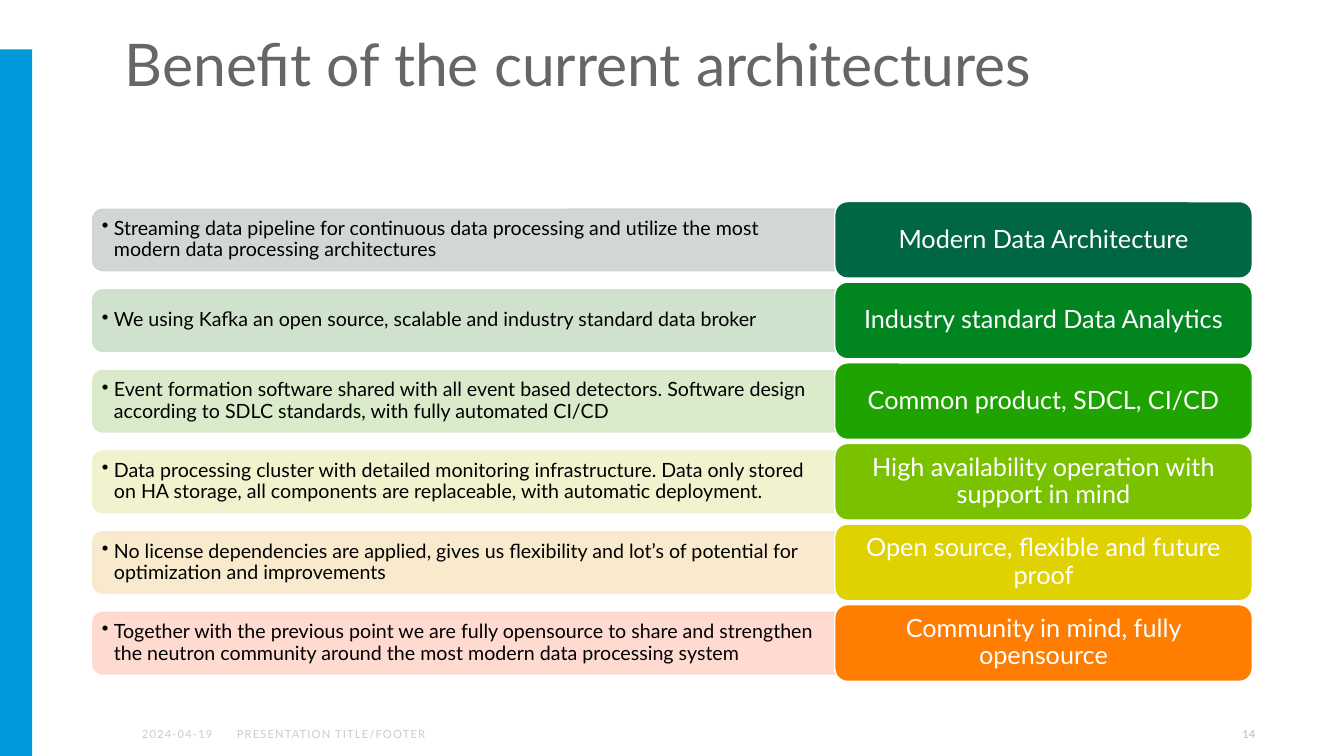
"""Build the slide on the benefits of the current architectures."""
from lxml import etree
from pptx import Presentation
from pptx.dml.color import RGBColor
from pptx.enum.shapes import MSO_SHAPE
from pptx.enum.text import MSO_ANCHOR, PP_ALIGN
from pptx.oxml.ns import qn
from pptx.util import Inches, Pt

RECTANGLE = MSO_SHAPE.RECTANGLE
ROUNDED = MSO_SHAPE.ROUNDED_RECTANGLE
ROUNDED_TOP = MSO_SHAPE.ROUND_2_SAME_RECTANGLE
TOP, MIDDLE = MSO_ANCHOR.TOP, MSO_ANCHOR.MIDDLE
LEFT, CENTER, RIGHT = PP_ALIGN.LEFT, PP_ALIGN.CENTER, PP_ALIGN.RIGHT

TITLE = "Benefit of the current architectures"
BENEFITS = [
    ("Modern Data Architecture",
     "Streaming data pipeline for continuous data processing and utilize the most "
     "modern data processing architectures", "006646", "CCD3CF"),
    ("Industry standard Data Analytics",
     "We using Kafka an open source, scalable and industry standard data broker",
     "008521", "CADFC9"),
    ("Common product, SDCL, CI/CD",
     "Event formation software shared with all event based detectors. Software design "
     "according to SDLC standards, with fully automated CI/CD", "1FA300", "D7E9C7"),
    ("High availability operation with support in mind",
     "Data processing cluster with detailed monitoring infrastructure. Data only stored "
     "on HA storage, all components are replaceable, with automatic deployment.",
     "7AC200", "EFF2C8"),
    ("Open source, flexible and future proof",
     "No license dependencies are applied, gives us flexibility and lot’s of potential for "
     "optimization and improvements", "E0D100", "F9E8C9"),
    ("Community in mind, fully opensource",
     "Together with the previous point we are fully opensource to share and strengthen "
     "the neutron community around the most modern data processing system",
     "FF7D00", "FFD6CC"),
]
FOOTERS = [
    ("PRESENTATION TITLE/FOOTER", (2.25, 7.08, 4.72, 0.4), LEFT, False, 80),
    ("14", (9.55, 7.08, 3, 0.4), RIGHT, True, 0),
    ("2024-04-19", (1.31, 7.08, 0.91, 0.4), LEFT, False, 80),
]
THEME = {
    "font": "Lato", "accent": "0099DC", "title": "666666", "footer": "CCCCCC",
    "body": "000000", "light": "FFFFFF",
    "title_size": 42, "label_size": 18, "body_size": 14, "footer_size": 8,
}
FIRST_TOP, PITCH = 2.0, 0.8
LABEL_LEFT, LABEL_WIDTH, LABEL_HEIGHT = 8.28, 4.14, 0.76
BAR_LEFT, BAR_LENGTH, BAR_HEIGHT = 0.92, 7.36, 0.61
BODY_LEFT, BODY_WIDTH, BODY_HEIGHT = 0.95, 7.33, 0.55


def add_block(slide, kind, box, fill, line=None, alpha=None):
    """Add a filled preset shape, with an optional line and opacity."""
    shape = slide.shapes.add_shape(kind, *map(Inches, box))
    shape.shadow.inherit = False
    shape.fill.solid()
    shape.fill.fore_color.rgb = RGBColor.from_string(fill)
    if line:
        shape.line.color.rgb = RGBColor.from_string(line)
        shape.line.width = Pt(1)
    else:
        shape.line.fill.background()
    if alpha:
        for color in shape._element.spPr.iter(qn("a:srgbClr")):
            etree.SubElement(color, qn("a:alpha"), val=str(alpha * 1000))
    return shape


def write(shape, text, size, color, align=LEFT, anchor=MIDDLE,
          insets=(0.1, 0.05, 0.1, 0.05), line_spacing=None, bold=False,
          tracking=0, bullet=False):
    """Write one formatted paragraph into a shape."""
    frame = shape.text_frame
    sides = ("margin_left", "margin_top", "margin_right", "margin_bottom")
    frame_format = dict(zip(sides, map(Inches, insets)))
    frame_format.update(word_wrap=True, vertical_anchor=anchor)
    for name, value in frame_format.items():
        setattr(frame, name, value)
    paragraph = frame.paragraphs[0]
    if bullet:
        properties = paragraph._p.get_or_add_pPr()
        properties.set("marL", str(Inches(0.12)))
        properties.set("indent", str(-Inches(0.12)))
        etree.SubElement(properties, qn("a:buChar"), char="•")
    paragraph.alignment = align
    paragraph.line_spacing = line_spacing
    run = paragraph.add_run()
    run.text = text
    font_format = {"name": THEME["font"], "size": Pt(size), "bold": bold}
    for name, value in font_format.items():
        setattr(run.font, name, value)
    run.font.color.rgb = RGBColor.from_string(color)
    if tracking:
        run._r.get_or_add_rPr().set("spc", str(tracking))


def add_text(slide, box, text, size, color, **options):
    """Add a text box holding one paragraph."""
    write(slide.shapes.add_textbox(*map(Inches, box)), text, size, color, **options)


def add_benefit(slide, row, label, body, strong, pale):
    """Add one row: a pale bar with its bullet and a strong label."""
    top = FIRST_TOP + row * PITCH
    middle = top + LABEL_HEIGHT / 2
    bar_box = (BAR_LEFT + (BAR_LENGTH - BAR_HEIGHT) / 2, middle - BAR_LENGTH / 2,
               BAR_HEIGHT, BAR_LENGTH)
    bar = add_block(slide, ROUNDED_TOP, bar_box, pale, pale, alpha=90)
    bar.rotation = 270
    add_text(slide, (BODY_LEFT, middle - BODY_HEIGHT / 2, BODY_WIDTH, BODY_HEIGHT),
             body, THEME["body_size"], THEME["body"], line_spacing=0.9,
             insets=(0.06, 0.03, 0.06, 0.03), bullet=True)
    label_box = (LABEL_LEFT, top, LABEL_WIDTH, LABEL_HEIGHT)
    label_shape = add_block(slide, ROUNDED, label_box, strong, THEME["light"])
    write(label_shape, label, THEME["label_size"], THEME["light"], align=CENTER,
          insets=(0.07, 0.04, 0.07, 0.04), line_spacing=0.9)


def main():
    """Assemble and save the slide."""
    presentation = Presentation()
    presentation.slide_width = Inches(13.33)
    presentation.slide_height = Inches(7.5)
    slide = presentation.slides.add_slide(presentation.slide_layouts[6])
    add_block(slide, RECTANGLE, (0, 0.49, 0.32, 7.01), THEME["accent"])
    for text, box, align, bold, tracking in FOOTERS:
        add_text(slide, box, text, THEME["footer_size"], THEME["footer"],
                 align=align, bold=bold, tracking=tracking)
    add_text(slide, (1.14, 0.31, 10.37, 0.72), TITLE, THEME["title_size"],
             THEME["title"], anchor=TOP, insets=(0.1, 0.05, 0.1, 0.02),
             line_spacing=0.9)
    for row, benefit in enumerate(BENEFITS):
        add_benefit(slide, row, *benefit)
    presentation.save("out.pptx")


if __name__ == "__main__":
    main()
